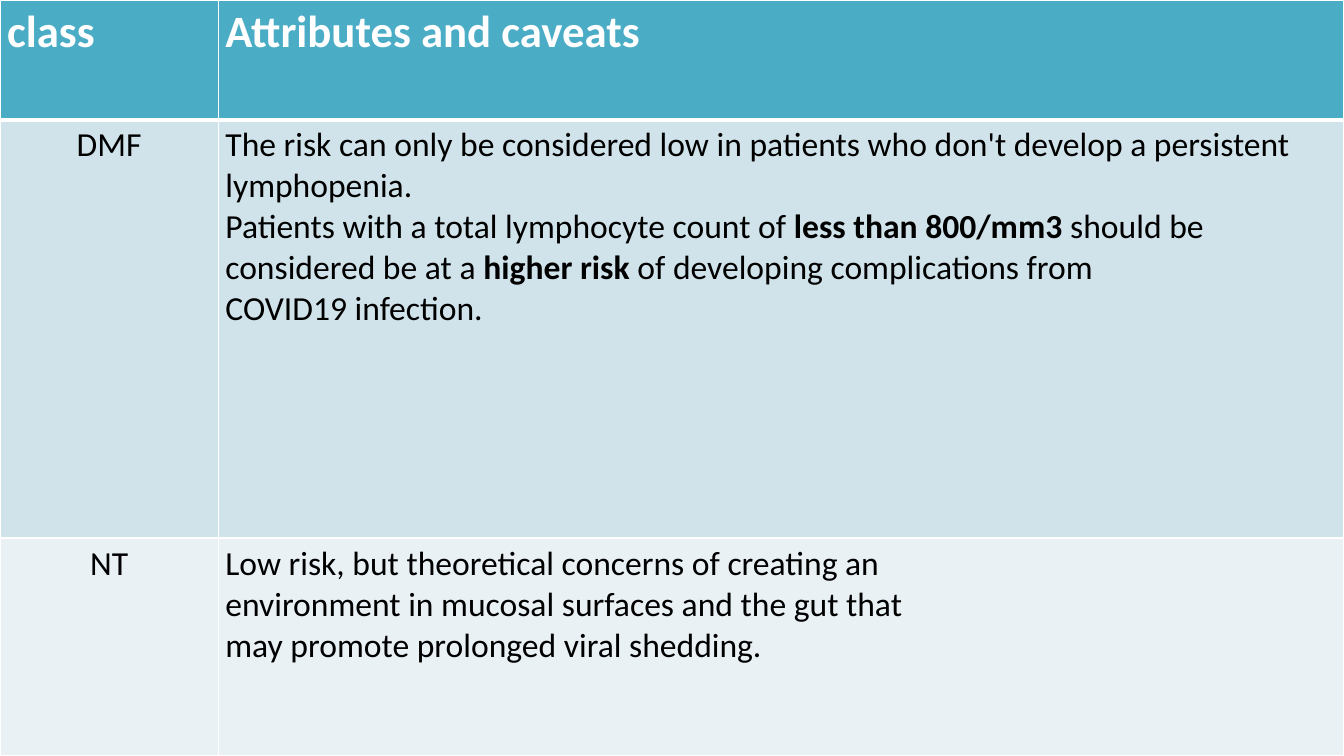
from dataclasses import dataclass

from lxml import etree
from pptx import Presentation
from pptx.dml.color import RGBColor
from pptx.enum.text import PP_ALIGN
from pptx.oxml.ns import qn
from pptx.util import Cm, Pt

LEFT, MID = PP_ALIGN.LEFT, PP_ALIGN.CENTER


@dataclass
class Theme:
    font: str = "Calibri"
    head: int = 32
    body: int = 24
    white: str = "FFFFFF"
    black: str = "000000"
    fills: tuple = ("4BACC6", "D0E3EA", "E9F1F5")
    thin: int = 1
    thick: int = 3


theme = Theme()


def write(frame, paras, size=theme.body, color=theme.black, bold=False, align=LEFT):
    for i, parts in enumerate(paras):
        para = frame.paragraphs[0] if i == 0 else frame.add_paragraph()
        para.alignment = align
        for j, text in enumerate(parts):
            run = para.add_run()
            run.text = text
            run.font.name = theme.font
            run.font.size = Pt(size)
            run.font.bold = bold or j % 2 == 1
            run.font.color.rgb = RGBColor.from_string(color)


def edge(cell, side, width):
    props = cell._tc.get_or_add_tcPr()
    line = etree.SubElement(props, qn(f"a:ln{side}"), w=str(Pt(width)))
    fill = etree.SubElement(line, qn("a:solidFill"))
    etree.SubElement(fill, qn("a:srgbClr"), val=theme.white)


deck = Presentation()
deck.slide_width, deck.slide_height = Cm(33.87), Cm(19.05)
slide = deck.slides.add_slide(deck.slide_layouts[6])

widths = [5.5, 28.37]
heights = [3.02, 10.54, 5.49]
rows = [
    ([["class"]], [["Attributes and caveats"]]),
    (
        [["DMF"]],
        [
            ["The risk can only be considered low in patients who don't develop a persistent lymphopenia."],
            [
                "Patients with a total lymphocyte count of ",
                "less than 800/mm3 ",
                "should be considered be at a ",
                "higher risk",
                " of developing complications from",
            ],
            ["COVID19 infection."],
        ],
    ),
    (
        [["NT"]],
        [
            ["Low risk, but theoretical concerns of creating an"],
            ["environment in mucosal surfaces and the gut that"],
            ["may promote prolonged viral shedding."],
        ],
    ),
]

table = slide.shapes.add_table(
    len(rows), len(widths), 0, 0, deck.slide_width, deck.slide_height
).table
for col, width in zip(table.columns, widths):
    col.width = Cm(width)
for row, height in zip(table.rows, heights):
    row.height = Cm(height)

for r, row in enumerate(rows):
    for c, paras in enumerate(row):
        cell = table.cell(r, c)
        cell.margin_left = cell.margin_right = Cm(0.18)
        cell.margin_top = cell.margin_bottom = Cm(0.13)
        for side in "LRTB":
            heavy = (r, side) in [(0, "B"), (1, "T")]
            edge(cell, side, theme.thick if heavy else theme.thin)
        cell.fill.solid()
        cell.fill.fore_color.rgb = RGBColor.from_string(theme.fills[r])
        if r == 0:
            write(cell.text_frame, paras, size=theme.head, color=theme.white, bold=True)
        else:
            write(cell.text_frame, paras, align=MID if c == 0 else LEFT)

deck.save("out.pptx")
